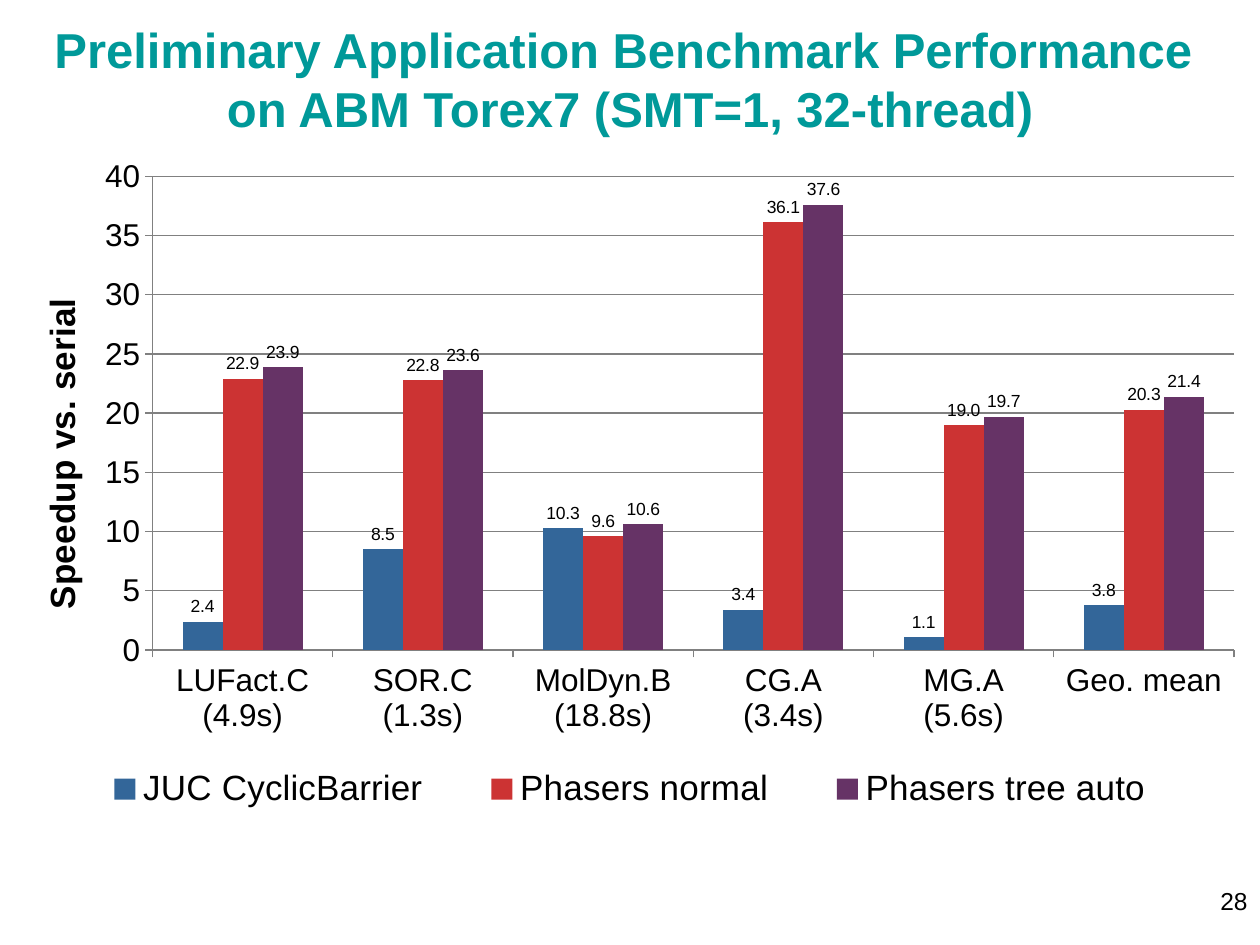
"""Build the benchmark speedup slide with a clustered column chart."""
from dataclasses import dataclass

from lxml import etree
from pptx import Presentation
from pptx.chart.data import CategoryChartData
from pptx.dml.color import RGBColor
from pptx.enum import chart as charts, text
from pptx.oxml import ns
from pptx.util import Pt


@dataclass(frozen=True)
class Theme:
    font: str = "Arial"
    title: str = "009999"
    ink: str = "000000"
    grid: str = "808080"
    series: tuple = ("336699", "CC3333", "663366")
    title_size: int = 28
    legend_size: int = 20
    axis_size: int = 18
    number_size: int = 14
    label_size: int = 10


theme = Theme()


def set_font(font, size, color=theme.ink, bold=False):
    font.name = theme.font
    font.size = Pt(size)
    font.bold = bold
    font.color.rgb = RGBColor.from_string(color)


def set_layout(element, **places):
    for old in element.findall(ns.qn("c:layout")):
        element.remove(old)
    layout = etree.Element(ns.qn("c:layout"))
    manual = etree.SubElement(layout, ns.qn("c:manualLayout"))
    for name, value in places.items():
        etree.SubElement(manual, ns.qn(f"c:{name}")).set("val", str(value))
    overlay = element.find(ns.qn("c:overlay"))
    if overlay is None:
        element.insert(0, layout)
    else:
        overlay.addprevious(layout)


deck = Presentation()
deck.slide_width, deck.slide_height = Pt(720), Pt(540)
page = deck.slides.add_slide(deck.slide_layouts[5])

title = page.shapes.title
title.left, title.top, title.width, title.height = Pt(0), Pt(0), Pt(720), Pt(90)
title.text_frame.text = "Preliminary Application Benchmark Performance \von ABM Torex7 (SMT=1, 32-thread)"
title.text_frame.vertical_anchor = text.MSO_ANCHOR.MIDDLE
para = title.text_frame.paragraphs[0]
para.alignment = text.PP_ALIGN.CENTER
set_font(para.font, theme.title_size, theme.title, True)

number = page.shapes.add_textbox(Pt(552), Pt(502.5), Pt(168), Pt(37.5))
number.text_frame.word_wrap = True
para = number.text_frame.paragraphs[0]
para.text = "28"
para.alignment = text.PP_ALIGN.RIGHT
set_font(para.font, theme.number_size)

data = CategoryChartData(number_format="0.0")
data.categories = ["LUFact.C\n(4.9s)", "SOR.C\n(1.3s)", "MolDyn.B\n(18.8s)",
                   "CG.A\n(3.4s)", "MG.A\n(5.6s)", "Geo. mean"]
data.add_series("JUC CyclicBarrier", (2.4, 8.5, 10.3, 3.4, 1.1, 3.8))
data.add_series("Phasers normal", (22.9, 22.8, 9.6, 36.1, 19.0, 20.3))
data.add_series("Phasers tree auto", (23.9, 23.6, 10.6, 37.6, 19.7, 21.4))
chart = page.shapes.add_chart(charts.XL_CHART_TYPE.COLUMN_CLUSTERED,
                              Pt(12), Pt(90), Pt(696), Pt(384), data).chart
chart.has_title = False
set_font(chart.font, theme.axis_size)

plot = chart.plots[0]
plot.gap_width, plot.overlap = 150, 0
plot.vary_by_categories = False
for series, color in zip(plot.series, theme.series):
    series.format.fill.solid()
    series.format.fill.fore_color.rgb = RGBColor.from_string(color)
    labels = series.data_labels
    labels.show_value = True
    labels.number_format, labels.number_format_is_linked = "0.0", False
    labels.position = charts.XL_LABEL_POSITION.OUTSIDE_END
    set_font(labels.font, theme.label_size)

values = chart.value_axis
values.minimum_scale, values.maximum_scale, values.major_unit = 0, 40, 5
values.has_major_gridlines = True
values.tick_labels.number_format = "0"
values.tick_labels.number_format_is_linked = False
values.axis_title.text_frame.text = "Speedup vs. serial"
set_font(values.axis_title.text_frame.paragraphs[0].font, theme.legend_size, bold=True)
for axis in (values, chart.category_axis):
    axis.major_tick_mark = charts.XL_TICK_MARK.OUTSIDE
    set_font(axis.tick_labels.font, theme.axis_size)
for part in (values, chart.category_axis, values.major_gridlines):
    part.format.line.color.rgb = RGBColor.from_string(theme.grid)
    part.format.line.width = Pt(0.75)

chart.has_legend = True
legend = chart.legend
legend.position = charts.XL_LEGEND_POSITION.BOTTOM
legend.include_in_layout = False
set_font(legend.font, theme.legend_size)

plot_area = chart.element.find(".//" + ns.qn("c:plotArea"))
axis_title = plot_area.find(".//" + ns.qn("c:valAx") + "/" + ns.qn("c:title"))
legend_area = chart.element.find(".//" + ns.qn("c:legend"))
edges = {"xMode": "edge", "yMode": "edge"}
set_layout(plot_area, layoutTarget="inner", **edges, x=0.108, y=0.028, w=0.888, h=0.705)
set_layout(axis_title, **edges, x=0.01, y=0.2)
set_layout(legend_area, **edges, x=0.03, y=0.89, w=0.94, h=0.1)

deck.save("out.pptx")
